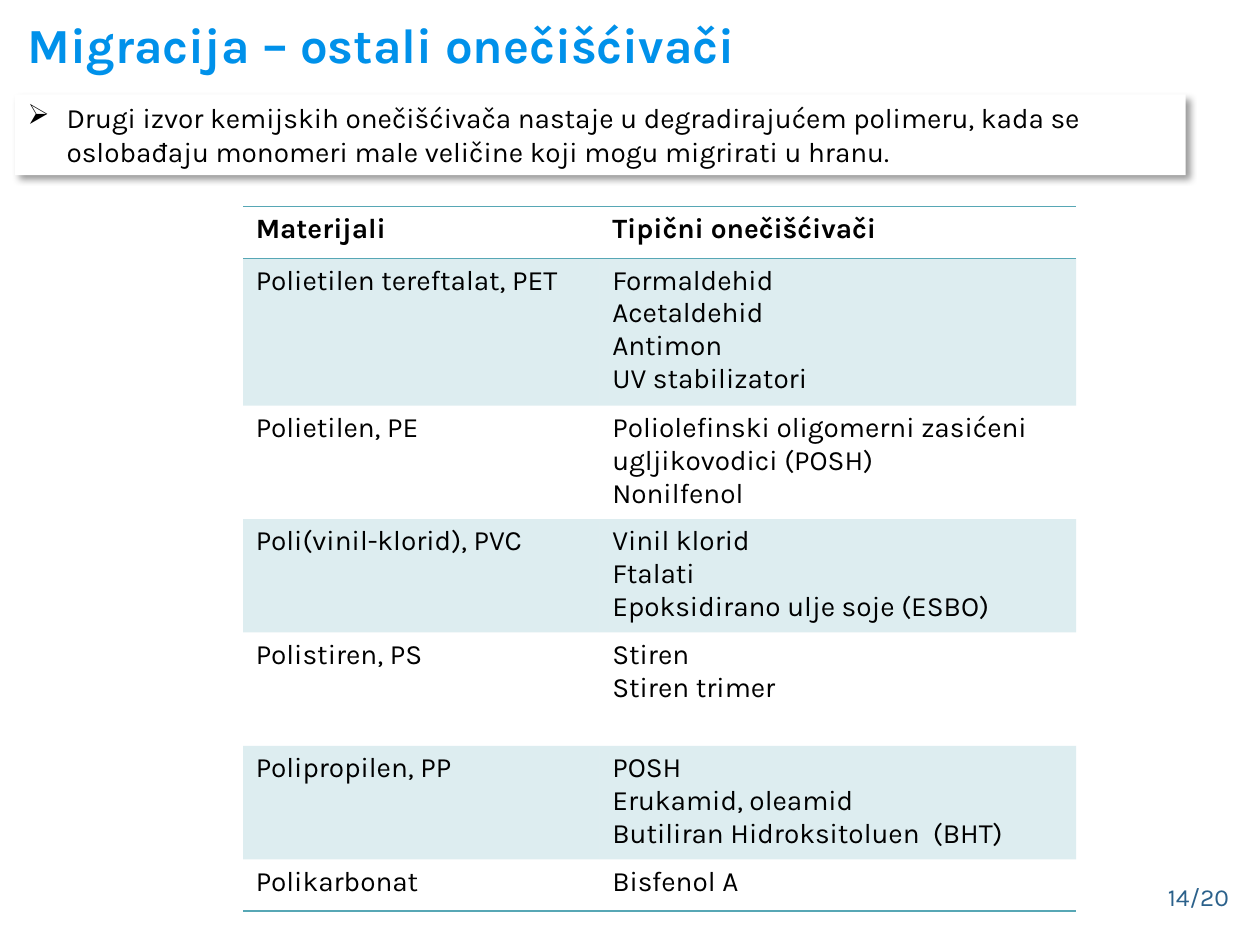
import pptx
import pptx.dml.color
import pptx.enum.shapes
import pptx.enum.text
import pptx.oxml
import pptx.oxml.ns
import pptx.util
from pptx.util import Inches

RGBColor = pptx.dml.color.RGBColor
BLUE = RGBColor(0x00, 0x91, 0xEA)
NAVY = RGBColor(0x2B, 0x61, 0x8B)
TEAL = RGBColor(0x57, 0xA7, 0xB5)
BLACK = RGBColor(0, 0, 0)
WHITE = RGBColor(0xFF, 0xFF, 0xFF)

FONT = "Karla"
NO_STYLE = "{2D5ABB26-0587-4C30-8999-92F81FD0307C}"
NAMESPACE = pptx.oxml.ns.nsdecls("a")
ANCHOR = pptx.enum.text.MSO_ANCHOR
LEFT = pptx.enum.text.PP_ALIGN.LEFT

HEADINGS = ("Materijali", "Tipični onečišćivači")
# Material, typical contaminants, row height in inches
MATERIALS = (
    ("Polietilen tereftalat, PET",
     ("Formaldehid", "Acetaldehid", "Antimon", "UV stabilizatori"), 1.17),
    ("Polietilen, PE",
     ("Poliolefinski oligomerni zasićeni ugljikovodici (POSH)",
      "Nonilfenol"), 0.9),
    ("Poli(vinil-klorid), PVC",
     ("Vinil klorid", "Ftalati", "Epoksidirano ulje soje (ESBO)"), 0.9),
    ("Polistiren, PS", ("Stiren", "Stiren trimer"), 0.9),
    ("Polipropilen, PP",
     ("POSH", "Erukamid, oleamid", "Butiliran Hidroksitoluen  (BHT)"), 0.9),
    ("Polikarbonat", ("Bisfenol A",), 0.41),
)


def add_span(para, text, size=16, color=BLACK, bold=False):
    para.alignment = LEFT
    span = para.add_run()
    span.text = text
    span.font.name = FONT
    span.font.size = pptx.util.Pt(size)
    span.font.bold = bold
    span.font.color.rgb = color


def add_xml(parent, xml):
    parent.append(pptx.oxml.parse_xml(xml))


def place_title(page, left, top, width, height):
    title = page.shapes.title
    title.left, title.top, title.width, title.height = left, top, width, height
    frame = title.text_frame
    frame.vertical_anchor = ANCHOR.BOTTOM
    frame.auto_size = pptx.enum.text.MSO_AUTO_SIZE.NONE
    frame.margin_left = frame.margin_right = Inches(0.1)
    frame.margin_top = frame.margin_bottom = Inches(0.1)
    add_span(frame.paragraphs[0], "Migracija – ostali onečišćivači", 28, BLUE, True)


def place_statement(page, left, top, width, height):
    box = page.shapes.add_shape(
        pptx.enum.shapes.MSO_SHAPE.RECTANGLE, left, top, width, height)
    box.fill.solid()
    box.fill.fore_color.rgb = WHITE
    box.line.fill.background()
    # Soft shadow to the lower right
    add_xml(box._element.spPr, f"""<a:effectLst {NAMESPACE}>
        <a:outerShdw blurRad="{pptx.util.Pt(4)}" dist="{pptx.util.Pt(3)}"
            dir="2700000" algn="tl" rotWithShape="0">
          <a:srgbClr val="{BLACK}"><a:alpha val="40000"/></a:srgbClr>
        </a:outerShdw></a:effectLst>""")
    frame = box.text_frame
    frame.word_wrap = True
    frame.vertical_anchor = ANCHOR.TOP
    frame.auto_size = pptx.enum.text.MSO_AUTO_SIZE.SHAPE_TO_FIT_TEXT
    para = frame.paragraphs[0]
    # Arrow bullet with hanging indent
    properties = para._p.get_or_add_pPr()
    properties.set("marL", str(Inches(0.31)))
    properties.set("indent", str(Inches(-0.31)))
    add_xml(properties, f'<a:buChar {NAMESPACE} char="➢"/>')
    add_span(para, "Drugi izvor kemijskih onečišćivača nastaje u degradirajućem "
                   "polimeru, kada se oslobađaju monomeri male veličine koji "
                   "mogu migrirati u hranu.")


def fill_cell(cell, lines, bold=False, shaded=False, borders=()):
    for index, line in enumerate(lines):
        frame = cell.text_frame
        para = frame.paragraphs[0] if index == 0 else frame.add_paragraph()
        add_span(para, line, bold=bold)
    properties = cell._tc.get_or_add_tcPr()
    for side in borders:
        add_xml(properties, f"""<a:{side} {NAMESPACE} w="{pptx.util.Pt(1)}">
            <a:solidFill><a:srgbClr val="{TEAL}"/></a:solidFill></a:{side}>""")
    if shaded:
        cell.fill.solid()
        cell.fill.fore_color.rgb = TEAL
        color = properties.find(".//" + pptx.oxml.ns.qn("a:srgbClr"))
        add_xml(color, f'<a:alpha {NAMESPACE} val="20000"/>')
    else:
        cell.fill.background()


def place_table(page, left, top, width, height):
    table = page.shapes.add_table(
        len(MATERIALS) + 1, 2, left, top, width, height).table
    table.horz_banding = table.first_row = False
    table._tbl.tblPr.find(pptx.oxml.ns.qn("a:tableStyleId")).text = NO_STYLE
    table.columns[0].width = Inches(2.83)
    table.columns[1].width = width - Inches(2.83)
    # Heading row
    table.rows[0].height = Inches(0.41)
    for column, heading in enumerate(HEADINGS):
        fill_cell(table.cell(0, column), [heading], bold=True,
                  borders=("lnT", "lnB"))
    # Body rows, every other one shaded
    for row, (material, contaminants, row_height) in enumerate(MATERIALS, 1):
        table.rows[row].height = Inches(row_height)
        borders = ("lnB",) if row == len(MATERIALS) else ()
        for column, lines in enumerate(([material], contaminants)):
            fill_cell(table.cell(row, column), lines,
                      shaded=row % 2 == 1, borders=borders)


def place_page_number(page, left, top, width, height):
    box = page.shapes.add_textbox(left, top, width, height)
    box.text_frame.word_wrap = True
    add_span(box.text_frame.paragraphs[0], "14/20", 14, NAVY)


def main():
    deck = pptx.Presentation()
    deck.slide_width, deck.slide_height = Inches(10), Inches(7.5)
    page = deck.slides.add_slide(deck.slide_layouts[5])
    place_statement(page, Inches(0.12), Inches(0.75), Inches(9.29), Inches(0.64))
    place_title(page, Inches(0.12), Inches(0.05), Inches(9.76), Inches(0.63))
    place_table(page, Inches(1.93), Inches(1.64), Inches(6.61), Inches(5.59))
    place_page_number(page, Inches(9.17), Inches(6.95), Inches(0.78), Inches(0.4))
    deck.save("out.pptx")


if __name__ == "__main__":
    main()
